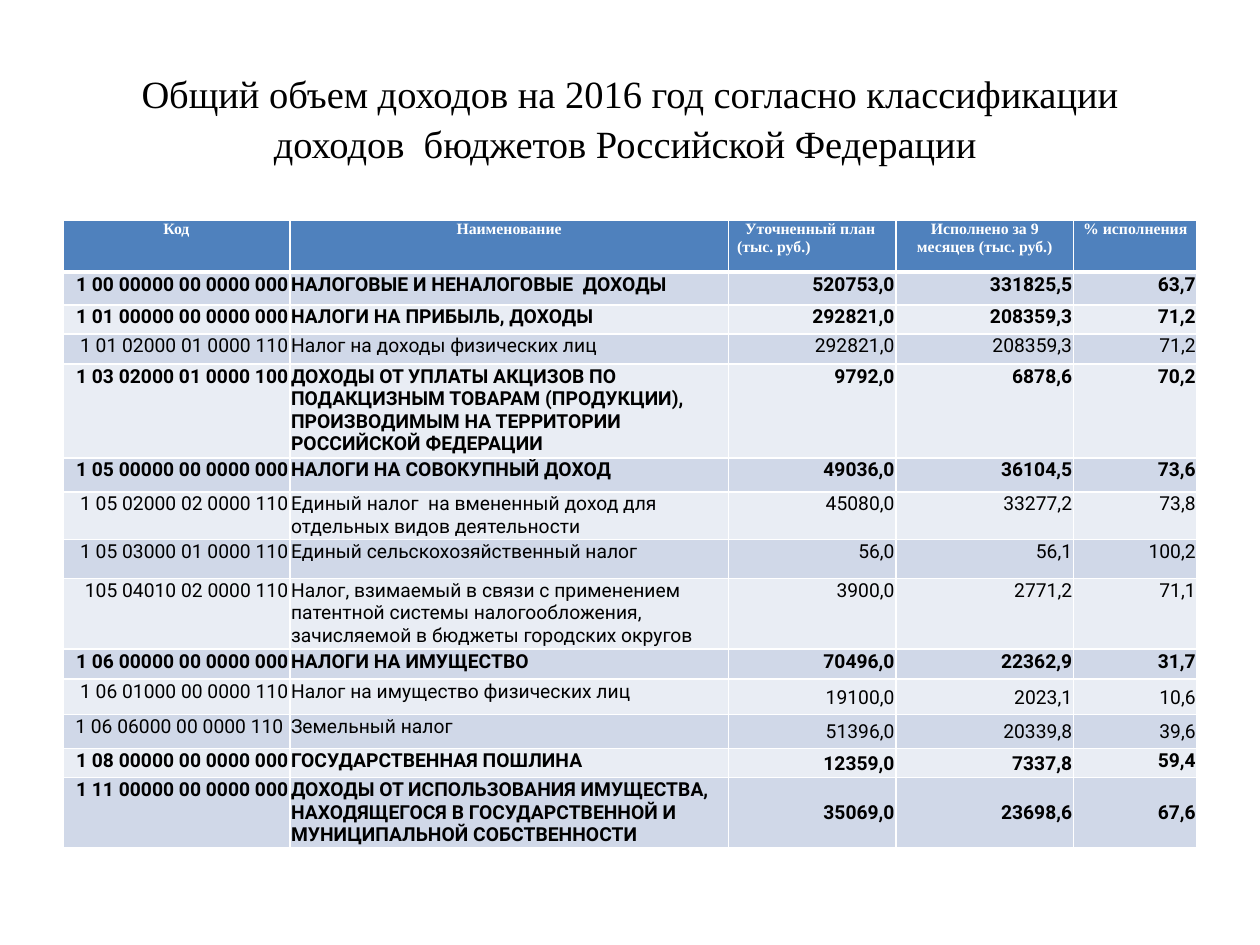
from dataclasses import dataclass

from lxml import etree
from pptx import Presentation
from pptx import util as u
from pptx.dml import color
from pptx.enum import text
from pptx.oxml import ns

SERIF, SANS = "Times New Roman", "Roboto"
WHITE, BLACK, HEADER_BLUE = "FFFFFF", "000000", "4F81BD"
BANDS = ("D0D8E8", "E9EDF4")
LEFT, CENTER, RIGHT = text.PP_ALIGN.LEFT, text.PP_ALIGN.CENTER, text.PP_ALIGN.RIGHT
TOP, MIDDLE = text.MSO_ANCHOR.TOP, text.MSO_ANCHOR.MIDDLE

TITLE = ("Общий объем доходов на 2016 год согласно классификации "
         "доходов  бюджетов Российской Федерации ")
COLUMN_WIDTHS = (1.8, 3.48, 1.33, 1.41, 0.98)
HEADER_HEIGHT = 0.41
HEADINGS = (
    (("Код", CENTER),),
    (("Наименование", CENTER),),
    (("Уточненный план ", CENTER), ("(тыс. руб.)", LEFT)),
    (("Исполнено за 9 месяцев (тыс. руб.)", CENTER),),
    (("% исполнения ", CENTER),),
)


@dataclass(frozen=True)
class Income:
    height: float
    code: str
    name: str
    plan: str
    actual: str
    percent: str
    middle_columns: tuple[int, ...] = ()

    @property
    def values(self) -> tuple[str, ...]:
        return self.code, self.name, self.plan, self.actual, self.percent


INCOMES = (
    Income(0.26, "1 00 00000 00 0000 000", "НАЛОГОВЫЕ И НЕНАЛОГОВЫЕ  ДОХОДЫ",
           "520753,0", "331825,5", "63,7"),
    Income(0.23, "1 01 00000 00 0000 000", "НАЛОГИ НА ПРИБЫЛЬ, ДОХОДЫ",
           "292821,0", "208359,3", "71,2"),
    Income(0.24, "1 01 02000 01 0000 110", "Налог на доходы физических лиц",
           "292821,0", "208359,3", "71,2"),
    Income(0.72, "1 03 02000 01 0000 100",
           "ДОХОДЫ ОТ УПЛАТЫ АКЦИЗОВ ПО ПОДАКЦИЗНЫМ ТОВАРАМ (ПРОДУКЦИИ), "
           "ПРОИЗВОДИМЫМ НА ТЕРРИТОРИИ РОССИЙСКОЙ ФЕДЕРАЦИИ",
           "9792,0", "6878,6", "70,2"),
    Income(0.27, "1 05 00000 00 0000 000", "НАЛОГИ НА СОВОКУПНЫЙ ДОХОД",
           "49036,0", "36104,5", "73,6"),
    Income(0.37, "1 05 02000 02 0000 110",
           "Единый налог  на вмененный доход для  отдельных видов деятельности",
           "45080,0", "33277,2", "73,8"),
    Income(0.31, "1 05 03000 01 0000 110", "Единый сельскохозяйственный налог",
           "56,0", "56,1", "100,2"),
    Income(0.54, "105 04010 02 0000 110",
           "Налог, взимаемый в связи с применением патентной системы "
           "налогообложения, зачисляемой в бюджеты городских округов",
           "3900,0", "2771,2", "71,1"),
    Income(0.24, "1 06 00000 00 0000 000", "НАЛОГИ НА ИМУЩЕСТВО",
           "70496,0", "22362,9", "31,7"),
    Income(0.28, "1 06 01000 00 0000 110", "Налог на имущество физических лиц",
           "19100,0", "2023,1", "10,6", (2, 3, 4)),
    Income(0.27, "1 06 06000 00 0000 110 ", "Земельный налог",
           "51396,0", "20339,8", "39,6", (2, 3, 4)),
    Income(0.23, "1 08 00000 00 0000 000", "ГОСУДАРСТВЕННАЯ ПОШЛИНА",
           "12359,0", "7337,8", "59,4", (2, 3)),
    Income(0.55, "1 11 00000 00 0000 000",
           "ДОХОДЫ ОТ ИСПОЛЬЗОВАНИЯ ИМУЩЕСТВА, НАХОДЯЩЕГОСЯ В ГОСУДАРСТВЕННОЙ "
           "И МУНИЦИПАЛЬНОЙ СОБСТВЕННОСТИ",
           "35069,0", "23698,6", "67,6", (2, 3, 4)),
)


def paint(target, hex_color: str) -> None:
    target.rgb = color.RGBColor.from_string(hex_color)


def apply_format(target, values: dict) -> None:
    for attribute, value in values.items():
        setattr(target, attribute, value)


def write(frame, lines, hex_color: str, font_format: dict) -> None:
    for index, (line, alignment) in enumerate(lines):
        paragraph = frame.add_paragraph() if index else frame.paragraphs[0]
        paragraph.alignment = alignment
        run = paragraph.add_run()
        run.text = line
        apply_format(run.font, font_format)
        paint(run.font.color, hex_color)


def add_borders(cell, bottom_points: float, top_points: float) -> None:
    properties = cell._tc.get_or_add_tcPr()
    widths = {"L": 1, "R": 1, "T": top_points, "B": bottom_points}
    for side, points in widths.items():
        border = etree.SubElement(properties, ns.qn(f"a:ln{side}"), w=str(u.Pt(points)))
        fill = etree.SubElement(border, ns.qn("a:solidFill"))
        etree.SubElement(fill, ns.qn("a:srgbClr"), val=WHITE)


def fill_cell(cell, lines, hex_color: str, background: str,
              cell_format: dict, font_format: dict,
              bottom_points: float = 1, top_points: float = 1) -> None:
    apply_format(cell, cell_format)
    add_borders(cell, bottom_points, top_points)
    cell.fill.solid()
    paint(cell.fill.fore_color, background)
    write(cell.text_frame, lines, hex_color, font_format)


def add_title(slide) -> None:
    frame = slide.shapes.add_textbox(
        u.Inches(0.5), u.Inches(0.3), u.Inches(9), u.Inches(1.25)).text_frame
    apply_format(frame, {"word_wrap": True, "vertical_anchor": MIDDLE})
    write(frame, [(TITLE, CENTER)], BLACK, {"name": SERIF, "size": u.Pt(22)})
    frame.paragraphs[0].line_spacing = 1.07


def add_income_table(slide) -> None:
    heights = [HEADER_HEIGHT, *(income.height for income in INCOMES)]
    table = slide.shapes.add_table(
        len(heights), len(COLUMN_WIDTHS), u.Inches(0.5), u.Inches(1.75),
        u.Inches(sum(COLUMN_WIDTHS)), u.Inches(sum(heights))).table
    for column, width in zip(table.columns, COLUMN_WIDTHS):
        column.width = u.Inches(width)
    for row, height in zip(table.rows, heights):
        row.height = u.Inches(height)

    header_format = {"margin_left": u.Inches(0.07), "margin_right": u.Inches(0.07),
                     "margin_top": 0, "margin_bottom": 0, "vertical_anchor": TOP}
    header_font = {"name": SERIF, "size": u.Pt(9), "bold": True}
    for column, lines in enumerate(HEADINGS):
        fill_cell(table.cell(0, column), lines, WHITE, HEADER_BLUE,
                  header_format, header_font, bottom_points=3)

    margin = u.Inches(0.01)
    body_format = {"margin_left": margin, "margin_right": margin,
                   "margin_top": margin, "margin_bottom": 0}
    for index, income in enumerate(INCOMES):
        body_font = {"name": SANS, "size": u.Pt(11), "bold": income.name.isupper()}
        for column, value in enumerate(income.values):
            anchor = MIDDLE if column in income.middle_columns else TOP
            alignment = LEFT if column == 1 else RIGHT
            fill_cell(table.cell(index + 1, column), [(value, alignment)], BLACK,
                      BANDS[index % 2], {**body_format, "vertical_anchor": anchor},
                      body_font, top_points=1 if index else 3)


def main() -> None:
    presentation = Presentation()
    apply_format(presentation, {"slide_width": u.Inches(10), "slide_height": u.Inches(7.5)})
    slide = presentation.slides.add_slide(presentation.slide_layouts[6])
    add_title(slide)
    add_income_table(slide)
    presentation.save("out.pptx")


if __name__ == "__main__":
    main()
